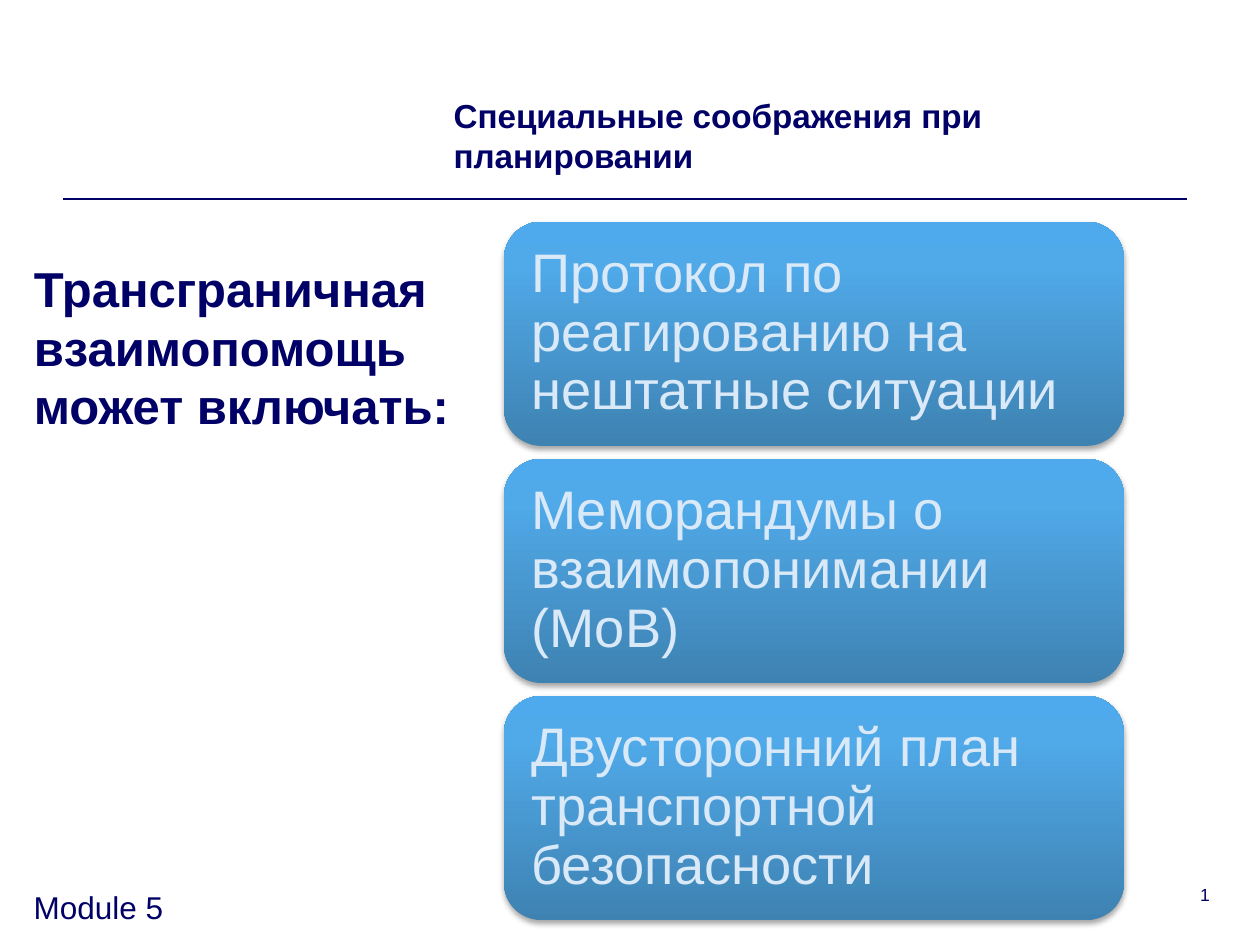
from lxml import etree
from pptx import Presentation, util as u
from pptx.dml.color import RGBColor
from pptx.enum import shapes, text
from pptx.oxml import parse_xml
from pptx.oxml.ns import nsdecls, qn

NAVY = RGBColor(0x00, 0x00, 0x66)
PALE = RGBColor(0xD9, 0xE9, 0xF8)
WHITE = RGBColor(0xFF, 0xFF, 0xFF)
SHADOW = RGBColor(0x00, 0x00, 0x00)
CARD_STOPS = (
    (0, RGBColor(0x3E, 0x82, 0xB2)),
    (80, RGBColor(0x50, 0xA9, 0xE8)),
    (100, RGBColor(0x4E, 0xAA, 0xEC)),
)
MEASURES = (
    "Протокол по реагированию на нештатные ситуации",
    "Меморандумы о взаимопонимании (МоВ)",
    "Двусторонний план транспортной безопасности",
)


class SlideBuilder:
    font = "Arial"

    def __init__(self, slide):
        self.slide = slide
        slide.background.fill.solid()
        slide.background.fill.fore_color.rgb = WHITE

    def place(self, holder, left, top, width, height):
        holder.left, holder.top = u.Cm(left), u.Cm(top)
        holder.width, holder.height = u.Cm(width), u.Cm(height)
        return holder

    def style(self, font, size, color, bold=False):
        font.name, font.size, font.bold = self.font, u.Pt(size), bold
        font.color.rgb = color

    def add_words(self, frame, words, size, color=NAVY, bold=False,
                  anchor=text.MSO_ANCHOR.TOP):
        frame.word_wrap = True
        frame.auto_size = text.MSO_AUTO_SIZE.NONE
        frame.vertical_anchor = anchor
        paragraph = frame.paragraphs[0]
        paragraph.alignment = text.PP_ALIGN.LEFT
        paragraph.space_before = u.Pt(0)
        run = paragraph.add_run()
        run.text = words
        self.style(run.font, size, color, bold)
        return paragraph

    def title(self, words, *box):
        heading = self.place(self.slide.shapes.title, *box)
        self.add_words(heading.text_frame, words, 19, bold=True,
                       anchor=text.MSO_ANCHOR.BOTTOM)

    def body(self, words, *box):
        lead = self.place(self.slide.placeholders[1], *box)
        paragraph = self.add_words(lead.text_frame, words, 28, bold=True)
        properties = paragraph._p.get_or_add_pPr()
        properties.set("marL", "0")
        properties.set("indent", "0")
        etree.SubElement(properties, qn("a:buNone"))

    def label(self, words, *box):
        note = self.slide.shapes.add_textbox(*map(u.Cm, box))
        self.add_words(note.text_frame, words, 18)

    def slide_number(self, number, *box):
        frame = self.slide.shapes.add_textbox(*map(u.Cm, box)).text_frame
        frame.word_wrap = True
        paragraph = frame.paragraphs[0]
        paragraph.alignment = text.PP_ALIGN.RIGHT
        self.style(paragraph.font, 10, NAVY)
        paragraph._p.append(parse_xml(
            f'<a:fld {nsdecls("a")} type="slidenum" '
            'id="{B6F15528-21DE-4FAA-801E-634DDDAF4B2B}">'
            f'<a:rPr lang="ru-RU" sz="1000"><a:solidFill><a:srgbClr val="{NAVY}"/>'
            f'</a:solidFill><a:latin typeface="{self.font}"/></a:rPr>'
            f'<a:t>{number}</a:t></a:fld>'))

    def rule(self, left, right, y):
        line = self.slide.shapes.add_connector(
            shapes.MSO_CONNECTOR.STRAIGHT, *map(u.Cm, (left, y, right, y)))
        line.line.color.rgb = NAVY
        line.line.width = u.Pt(1)
        etree.SubElement(line._element.spPr, qn("a:effectLst"))

    def card(self, words, *box):
        card = self.slide.shapes.add_shape(
            shapes.MSO_SHAPE.ROUNDED_RECTANGLE, *map(u.Cm, box))
        card.line.fill.background()
        card.fill.gradient()
        card.fill.gradient_angle = 90
        properties = card._element.spPr
        stops = properties.find(".//" + qn("a:gsLst"))
        stops.clear()
        for percent, color in CARD_STOPS:
            stop = etree.SubElement(stops, qn("a:gs"), pos=str(percent * 1000))
            etree.SubElement(stop, qn("a:srgbClr"), val=str(color))
        properties.append(parse_xml(
            f'<a:effectLst {nsdecls("a")}><a:outerShdw blurRad="{u.Pt(3.1)}" '
            f'dist="{u.Pt(1.8)}" dir="5400000" rotWithShape="0">'
            f'<a:srgbClr val="{SHADOW}"><a:alpha val="35000"/></a:srgbClr>'
            '</a:outerShdw></a:effectLst>'))
        frame = card.text_frame
        frame.margin_left = frame.margin_right = u.Cm(0.33)
        frame.margin_top = frame.margin_bottom = u.Cm(0.33)
        paragraph = self.add_words(frame, words, 31, PALE,
                                   anchor=text.MSO_ANCHOR.MIDDLE)
        paragraph.line_spacing = 0.9


def main():
    deck = Presentation()
    deck.slide_width, deck.slide_height = u.Cm(25.4), u.Cm(19.05)
    page = SlideBuilder(deck.slides.add_slide(deck.slide_layouts[1]))
    page.rule(1.27, 23.93, 4.01)
    page.slide_number(9, 18.92, 17.7, 5.72, 1.02)
    page.title("Специальные соображения при планировании",
               8.89, 0.43, 13.77, 3.23)
    page.body("Трансграничная взаимопомощь может включать:",
              0.43, 5.08, 9.19, 11.94)
    page.label("Module 5", 0.43, 17.78, 6.55, 1.27)
    for row, measure in enumerate(MEASURES):
        page.card(measure, 10.16, 4.47 + row * 4.78, 12.5, 4.52)
    deck.save("out.pptx")


if __name__ == "__main__":
    main()
